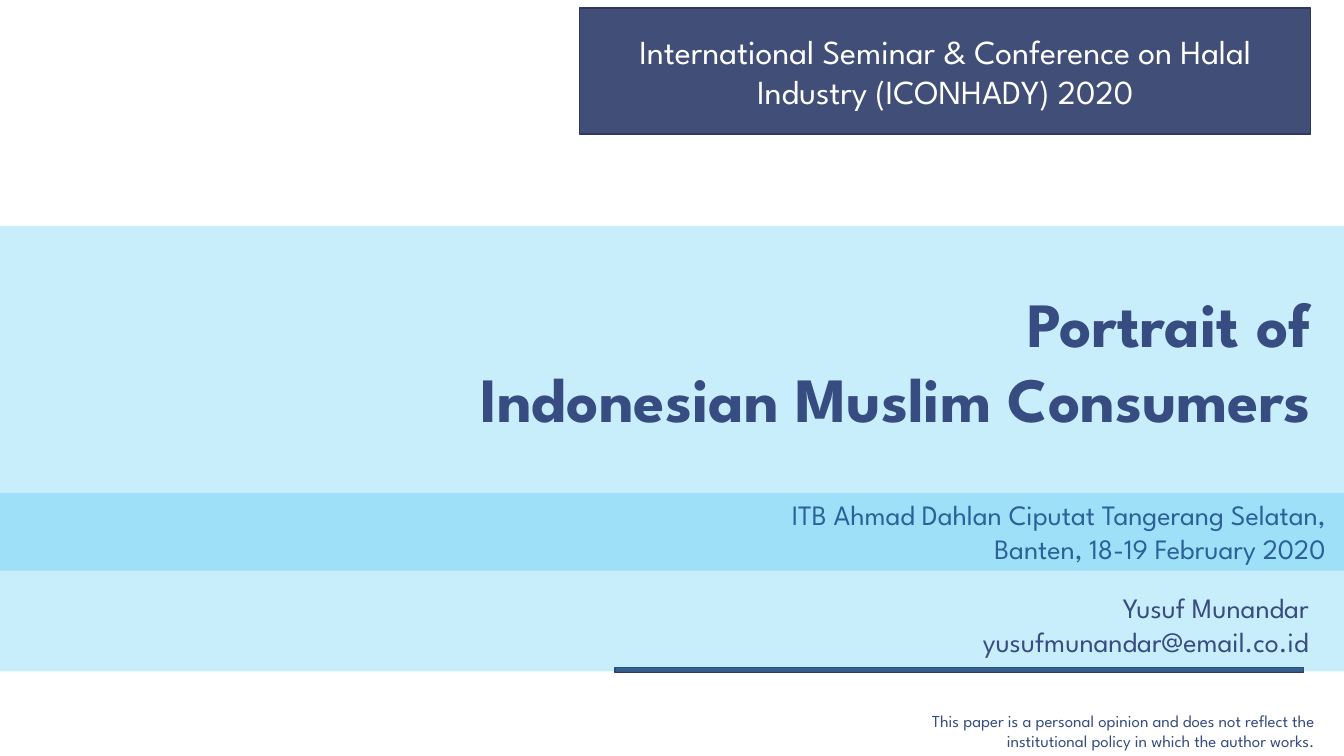
from dataclasses import dataclass

from lxml.etree import SubElement
from pptx import Presentation
from pptx.dml.color import RGBColor as RGB
from pptx.enum.shapes import MSO_SHAPE as Shape
from pptx.enum.text import MSO_ANCHOR as Anchor, PP_ALIGN as Align
from pptx.oxml.ns import qn
from pptx.util import Inches, Pt


@dataclass(frozen=True)
class Theme:
    face: str = "League Spartan"
    navy: RGB = RGB(0x41, 0x4E, 0x77)
    edge: RGB = RGB(0x30, 0x3A, 0x58)
    ink: RGB = RGB(0x37, 0x4C, 0x81)
    sky: RGB = RGB(0x00, 0xB0, 0xF0)
    white: RGB = RGB(0xFF, 0xFF, 0xFF)
    title: int = 45
    event: int = 24
    body: int = 20
    note: int = 12


theme = Theme()


def apply(item, values):
    for name, value in values.items():
        setattr(item, name, value)


def write(shape, lines, size, color, align=Align.RIGHT, bold=False, anchor=Anchor.TOP):
    frame = shape.text_frame
    apply(frame, {"text": "\n".join(lines), "word_wrap": True, "vertical_anchor": anchor})
    for para in frame.paragraphs:
        para.alignment = align
        apply(para.font, {"name": theme.face, "size": Pt(size), "bold": bold})
        para.font.color.rgb = color


def add_rect(slide, box, color):
    rect = slide.shapes.add_shape(Shape.RECTANGLE, *map(Inches, box))
    rect.shadow.inherit = False
    rect.fill.solid()
    rect.fill.fore_color.rgb = color
    return rect


def add_band(slide, top, height):
    band = add_rect(slide, (0, top, 13.33, height), theme.sky)
    band.line.fill.background()
    tint = band.fill._xPr.find(qn("a:solidFill"))[0]
    SubElement(tint, qn("a:alpha")).set("val", "21000")


def add_panel(slide, box):
    panel = add_rect(slide, box, theme.navy)
    panel.line.color.rgb = theme.edge
    panel.line.width = Pt(1)
    return panel


def add_text(slide, box, lines, size, bold=False):
    area = slide.shapes.add_textbox(*map(Inches, box))
    write(area, lines, size, theme.ink, bold=bold)


def main():
    deck = Presentation()
    apply(deck, {"slide_width": Inches(13.33), "slide_height": Inches(7.5)})
    slide = deck.slides.add_slide(deck.slide_layouts[6])

    add_band(slide, 2.24, 3.42)
    add_text(slide, (1.1, 2.77, 12, 1.62),
             ["Portrait of", "Indonesian Muslim Consumers"], theme.title, bold=True)
    add_text(slide, (7.58, 4.89, 5.67, 0.77),
             ["ITB Ahmad Dahlan Ciputat Tangerang Selatan, Banten, 18-19 February 2020"],
             theme.body)
    add_panel(slide, (6.1, 6.62, 6.83, 0.05))
    add_band(slide, 4.89, 1.77)
    add_text(slide, (8.58, 5.81, 4.5, 0.77),
             ["Yusuf Munandar", "yusufmunandar@email.co.id"], theme.body)
    add_text(slide, (8.64, 7, 4.5, 0.5),
             ["This paper is a personal opinion and does not reflect the "
              "institutional policy in which the author works."], theme.note)
    event = add_panel(slide, (5.75, 0.08, 7.25, 1.25))
    write(event, ["International Seminar & Conference on Halal Industry (ICONHADY) 2020"],
          theme.event, theme.white, Align.CENTER, anchor=Anchor.MIDDLE)

    deck.save("out.pptx")


if __name__ == "__main__":
    main()
